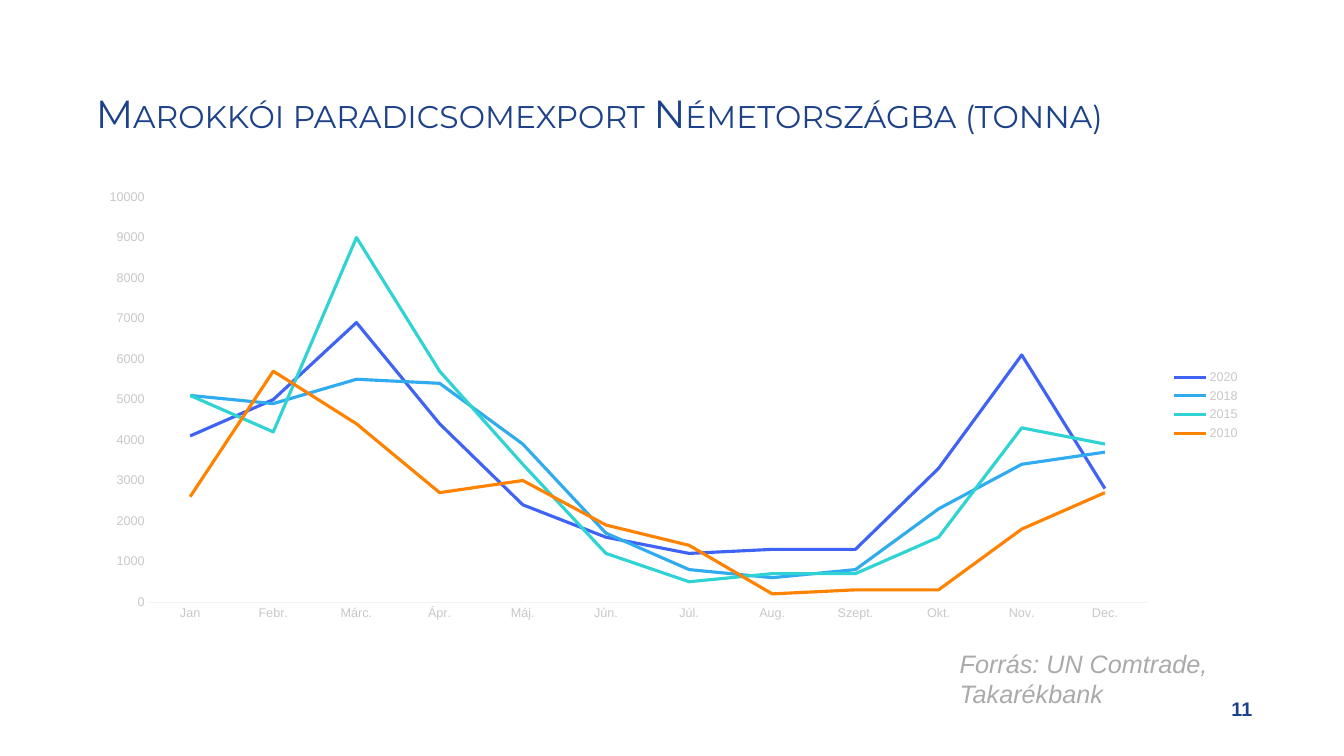
from dataclasses import dataclass

from lxml.etree import SubElement
from pptx import Presentation
from pptx.chart.data import CategoryChartData
from pptx.dml.color import RGBColor
from pptx.enum.chart import XL_CHART_TYPE, XL_LEGEND_POSITION, XL_TICK_MARK
from pptx.enum.text import MSO_ANCHOR, MSO_AUTO_SIZE, PP_ALIGN
from pptx.oxml.ns import qn
from pptx.util import Inches, Pt


@dataclass(frozen=True)
class Theme:
    heading_font: str = "Montserrat"
    text_font: str = "Arial"
    navy: str = "1D428A"
    source_grey: str = "AAAAAA"
    label_grey: str = "C8C8C8"
    axis_grey: str = "F2F2F2"
    title_size: int = 28
    source_size: int = 18
    number_size: int = 14
    chart_size: int = 10
    label_size: int = 9
    series_width: float = 2.25
    axis_width: float = 0.75


theme = Theme()


def style_font(font, name, size, color):
    font.name = name
    font.size = Pt(size)
    font.color.rgb = RGBColor.from_string(color)


def add_run(paragraph, wording, name, size, color):
    run = paragraph.add_run()
    run.text = wording
    style_font(run.font, name, size, color)
    return run


presentation = Presentation()
presentation.slide_width = Inches(13.33)
presentation.slide_height = Inches(7.5)
slide = presentation.slides.add_slide(presentation.slide_layouts[5])

# Title
title = slide.shapes.title
title.left, title.top = Inches(0.85), Inches(0.89)
title.width, title.height = Inches(11.55), Inches(0.89)
title_frame = title.text_frame
title_frame.word_wrap = True
title_frame.auto_size = MSO_AUTO_SIZE.NONE
title_frame.vertical_anchor = MSO_ANCHOR.TOP
heading = title_frame.paragraphs[0]
heading.alignment = PP_ALIGN.LEFT
heading.line_spacing = 0.9
heading_run = add_run(heading, "Marokkói paradicsomexport Németországba (tonna)",
                      theme.heading_font, theme.title_size, theme.navy)
heading_run.font._element.set("cap", "small")

# Monthly exports by year
months = ["Jan", "Febr.", "Márc.", "Ápr.", "Máj.", "Jún.",
          "Júl.", "Aug.", "Szept.", "Okt.", "Nov.", "Dec."]
exports = {
    "2020": ("3F63F5", [4100, 5000, 6900, 4400, 2400, 1600, 1200, 1300, 1300, 3300, 6100, 2800]),
    "2018": ("30ABF0", [5100, 4900, 5500, 5400, 3900, 1700, 800, 600, 800, 2300, 3400, 3700]),
    "2015": ("2FD3D3", [5100, 4200, 9000, 5700, 3400, 1200, 500, 700, 700, 1600, 4300, 3900]),
    "2010": ("FF8200", [2600, 5700, 4400, 2700, 3000, 1900, 1400, 200, 300, 300, 1800, 2700]),
}
export_data = CategoryChartData(number_format="0")
export_data.categories = months
for year, (_, tonnes) in exports.items():
    export_data.add_series(year, tonnes)
chart = slide.shapes.add_chart(XL_CHART_TYPE.LINE, Inches(0.85), Inches(1.79),
                               Inches(11.55), Inches(4.46), export_data).chart
chart.has_title = False
style_font(chart.font, theme.text_font, theme.chart_size, theme.source_grey)
chart.plots[0].vary_by_categories = False

for series, (color, _) in zip(chart.plots[0].series, exports.values()):
    series.smooth = False
    series.format.line.width = Pt(theme.series_width)
    series.format.line.color.rgb = RGBColor.from_string(color)

month_axis, tonne_axis = chart.category_axis, chart.value_axis
for axis in (month_axis, tonne_axis):
    axis.has_major_gridlines = False
    axis.major_tick_mark = XL_TICK_MARK.NONE
    axis.minor_tick_mark = XL_TICK_MARK.NONE
    style_font(axis.tick_labels.font, theme.text_font, theme.label_size, theme.label_grey)
month_axis.format.line.width = Pt(theme.axis_width)
month_axis.format.line.color.rgb = RGBColor.from_string(theme.axis_grey)
tonne_axis.format.line.fill.background()
tonne_axis.minimum_scale, tonne_axis.maximum_scale = 0, 10000
tonne_axis.major_unit = 1000

chart.has_legend = True
chart.legend.position = XL_LEGEND_POSITION.RIGHT
chart.legend.include_in_layout = False
style_font(chart.legend.font, theme.text_font, theme.label_size, theme.label_grey)

# Fixed inner plot area, as fractions of the chart frame
plot_area = chart._chartSpace.chart.plotArea
for old_layout in plot_area.findall(qn("c:layout")):
    plot_area.remove(old_layout)
layout = SubElement(plot_area, qn("c:layout"))
plot_area.insert(0, layout)
manual = SubElement(layout, qn("c:manualLayout"))
for tag, setting in (("layoutTarget", "inner"), ("xMode", "edge"), ("yMode", "edge"),
                     ("x", "0.054"), ("y", "0.037"), ("w", "0.857"), ("h", "0.901")):
    SubElement(manual, qn(f"c:{tag}")).set("val", setting)

# Source line
source_frame = slide.shapes.add_textbox(Inches(9.42), Inches(6.38),
                                        Inches(2.67), Inches(0.71)).text_frame
source_frame.word_wrap = True
source_frame.auto_size = MSO_AUTO_SIZE.SHAPE_TO_FIT_TEXT
source_run = add_run(source_frame.paragraphs[0], "Forrás: UN Comtrade, Takarékbank",
                     theme.text_font, theme.source_size, theme.source_grey)
source_run.font.italic = True

# Page number
page_frame = slide.shapes.add_textbox(Inches(9.42), Inches(6.83),
                                      Inches(3), Inches(0.4)).text_frame
page_frame.word_wrap = True
page_frame.vertical_anchor = MSO_ANCHOR.MIDDLE
page_frame.margin_right = 0
page_frame.paragraphs[0].alignment = PP_ALIGN.RIGHT
page_run = add_run(page_frame.paragraphs[0], "11",
                   theme.text_font, theme.number_size, theme.navy)
page_run.font.bold = True

presentation.save("out.pptx")
